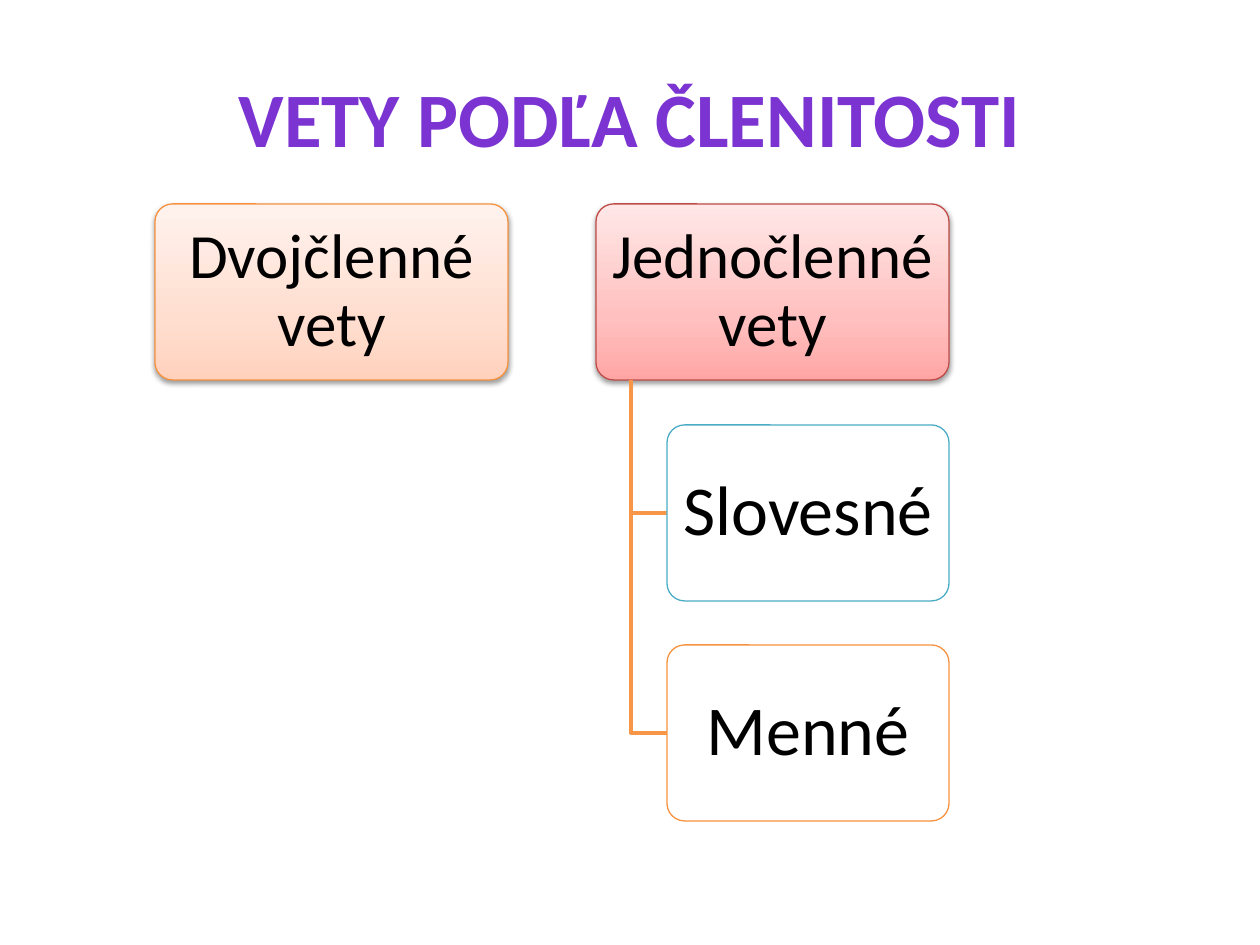
import copy
from dataclasses import dataclass

import pptx
import pptx.dml.color
import pptx.enum.shapes
import pptx.enum.text
import pptx.oxml
import pptx.oxml.ns
import pptx.util
from pptx.shapes.autoshape import Shape
from pptx.slide import Slide

EMU_PER_PX = 914400 / 126
FONT = "Calibri"
COLORS = {
    "title": "7B34D2",
    "text": "000000",
    "white": "FFFFFF",
    "orange": "F69240",
    "branch": "F79646",
    "red": "BF4C48",
    "teal": "4BACC6",
    "orange_deep": "FFD2BD",
    "orange_mid": "FFDED0",
    "orange_pale": "FFF2ED",
    "red_deep": "FFA6A5",
    "red_mid": "FFC0BF",
    "red_pale": "FFE7E7",
}
GRADIENT_POSITIONS = (0, 0.35, 1)
BOX_HEIGHT = 176
TRUNK_LEFT = 631
PARENT_TOP = 204


@dataclass(frozen=True)
class Box:
    text: str
    left: int
    top: int
    width: int
    font_size: int
    inset: tuple[int, int]
    line: str
    fills: tuple[str, ...]  # one colour, or gradient colours from bottom to top


PARENTS = (
    Box("Dvojčlenné vety", 155, PARENT_TOP, 353, 36, (9, 6), "orange",
        ("orange_deep", "orange_mid", "orange_pale")),
    Box("Jednočlenné vety", 596, PARENT_TOP, 353, 36, (9, 6), "red",
        ("red_deep", "red_mid", "red_pale")),
)
CHILDREN = (
    Box("Slovesné", 667, 425, 282, 40, (10, 8), "teal", ("white",)),
    Box("Menné", 667, 645, 282, 40, (10, 8), "orange", ("white",)),
)


def px(length: int) -> int:
    return round(length * EMU_PER_PX)


def rgb(name: str) -> pptx.dml.color.RGBColor:
    return pptx.dml.color.RGBColor.from_string(COLORS[name])


def set_text(shape: Shape, text: str, size: int, color: str, bold: bool = False) -> None:
    frame = shape.text_frame
    frame.text = text
    frame.word_wrap = True
    frame.vertical_anchor = pptx.enum.text.MSO_ANCHOR.MIDDLE
    paragraph = frame.paragraphs[0]
    paragraph.alignment = pptx.enum.text.PP_ALIGN.CENTER
    font = paragraph.runs[0].font
    font.name = FONT
    font.size = pptx.util.Pt(size)
    font.bold = bold
    font.color.rgb = rgb(color)


def set_gradient(shape: Shape, fills: tuple[str, ...]) -> None:
    """Fill with three stops; the default gradient has only two."""
    shape.fill.gradient()
    shape.fill.gradient_angle = 90
    stop_list = shape.element.spPr.find(".//" + pptx.oxml.ns.qn("a:gsLst"))
    stop_list.insert(1, copy.deepcopy(stop_list[0]))
    for stop, position, fill in zip(shape.fill.gradient_stops, GRADIENT_POSITIONS, fills):
        stop.position = position
        stop.color.rgb = rgb(fill)


def add_drop_shadow(shape: Shape) -> None:
    effects = shape.element.spPr.find(pptx.oxml.ns.qn("a:effectLst"))
    effects.append(pptx.oxml.parse_xml(
        f'<a:outerShdw {pptx.oxml.ns.nsdecls("a")} blurRad="40000" dist="20000" '
        'dir="5400000" rotWithShape="0"><a:srgbClr val="000000">'
        '<a:alpha val="38000"/></a:srgbClr></a:outerShdw>'
    ))


def add_title(slide: Slide) -> None:
    title = slide.shapes.add_textbox(px(63), px(38), px(1134), px(158))
    set_text(title, "VETY PODĽA ČLENITOSTI", 44, "title", bold=True)


def add_box(slide: Slide, box: Box) -> None:
    shape = slide.shapes.add_shape(
        pptx.enum.shapes.MSO_SHAPE.ROUNDED_RECTANGLE,
        px(box.left), px(box.top), px(box.width), px(BOX_HEIGHT),
    )
    shape.adjustments[0] = 0.1
    shape.line.color.rgb = rgb(box.line)
    shape.line.width = pptx.util.Pt(0.75)
    shape.shadow.inherit = False
    if len(box.fills) > 1:
        set_gradient(shape, box.fills)
        add_drop_shadow(shape)
    else:
        shape.fill.solid()
        shape.fill.fore_color.rgb = rgb(box.fills[0])
    set_text(shape, box.text, box.font_size, "text")
    frame = shape.text_frame
    frame.margin_left = frame.margin_right = px(box.inset[0])
    frame.margin_top = frame.margin_bottom = px(box.inset[1])
    frame.paragraphs[0].line_spacing = 0.9


def add_branch(slide: Slide, child: Box) -> None:
    """Draw the elbow from the parent's lower edge to the child's left side."""
    middle = child.top + BOX_HEIGHT // 2
    builder = slide.shapes.build_freeform(
        TRUNK_LEFT, PARENT_TOP + BOX_HEIGHT, scale=EMU_PER_PX
    )
    builder.add_line_segments([(TRUNK_LEFT, middle), (child.left, middle)], close=False)
    branch = builder.convert_to_shape()
    branch.fill.background()
    branch.line.color.rgb = rgb("branch")
    branch.line.width = pptx.util.Pt(2)
    branch.shadow.inherit = False


def main() -> None:
    presentation = pptx.Presentation()
    presentation.slide_width = px(1260)
    presentation.slide_height = px(945)
    slide = presentation.slides.add_slide(presentation.slide_layouts[6])
    add_title(slide)
    for parent in PARENTS:
        add_box(slide, parent)
    for child in CHILDREN:
        add_branch(slide, child)
        add_box(slide, child)
    presentation.save("out.pptx")


if __name__ == "__main__":
    main()
